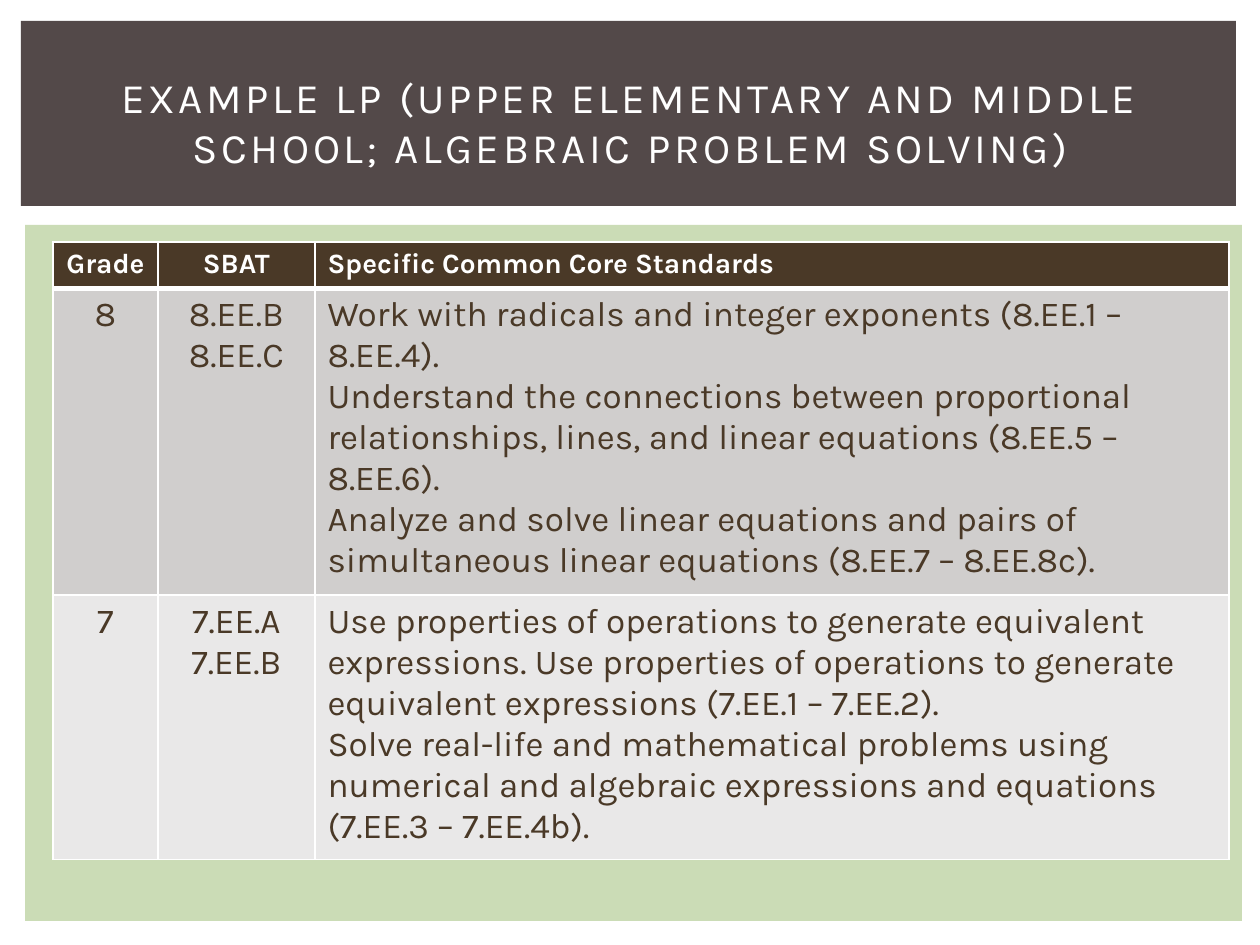
import pptx
import pptx.dml.color
import pptx.enum.shapes
import pptx.enum.text
import pptx.oxml
import pptx.oxml.ns
import pptx.util

PX = 914400 // 126
FONT = "Karla"
WHITE, BROWN = "FFFFFF", "4A3927"
CENTER = pptx.enum.text.PP_ALIGN.CENTER
LEFT = pptx.enum.text.PP_ALIGN.LEFT
MIDDLE = pptx.enum.text.MSO_ANCHOR.MIDDLE

TITLE = "EXAMPLE LP (UPPER ELEMENTARY AND MIDDLE SCHOOL; ALGEBRAIC PROBLEM SOLVING)"
TITLE_BOX = (53, 49, 1155, 145)
PANELS = [
    ((25, 225, 1217, 696), "CBDCB6"),
    ((21, 21, 1215, 185), "534949"),
]

STANDARDS = [
    (["Grade"], ["SBAT"], ["Specific Common Core Standards"]),
    (["8"], ["8.EE.B", "8.EE.C"], [
        "Work with radicals and integer exponents (8.EE.1 – 8.EE.4).",
        "Understand the connections between proportional relationships, lines, "
        "and linear equations (8.EE.5 – 8.EE.6).",
        "Analyze and solve linear equations and pairs of simultaneous linear "
        "equations (8.EE.7 – 8.EE.8c).",
    ]),
    (["7"], ["7.EE.A", "7.EE.B"], [
        "Use properties of operations to generate equivalent expressions. Use "
        "properties of operations to generate equivalent expressions (7.EE.1 – 7.EE.2).",
        "Solve real-life and mathematical problems using numerical and algebraic "
        "expressions and equations (7.EE.3 – 7.EE.4b).",
    ]),
]
TABLE_LEFT, TABLE_TOP = 53, 242
COLUMN_WIDTHS = [105, 157, 914]
COLUMN_ALIGNS = [CENTER, CENTER, LEFT]
ROW_HEIGHTS = [45, 299, 259]
ROW_FILLS = [BROWN, "D0CECD", "E9E8E8"]
HEADER_FORMAT = {"size": 16, "color": WHITE, "bold": True}
BODY_FORMAT = {"size": 20, "color": BROWN, "bold": False}


def emu(*lengths):
    return [length * PX for length in lengths]


def rgb(value):
    return pptx.dml.color.RGBColor.from_string(value)


def paint(part, color):
    part.fill.solid()
    part.fill.fore_color.rgb = rgb(color)


def write(frame, lines, align, size, color, bold=False):
    frame.word_wrap = True
    for index, line in enumerate(lines):
        paragraph = frame.paragraphs[0] if index == 0 else frame.add_paragraph()
        paragraph.alignment = align
        font = paragraph.add_run().font
        paragraph.runs[0].text = line
        values = {"name": FONT, "size": pptx.util.Pt(size), "bold": bold}
        for name, value in values.items():
            setattr(font, name, value)
        font.color.rgb = rgb(color)


def set_borders(cell, widths):
    """Draw white cell borders; widths maps a side (L, R, T, B) to points."""
    properties = cell._tc.get_or_add_tcPr()
    for position, (side, width) in enumerate(widths.items()):
        line = pptx.oxml.parse_xml(
            f'<a:ln{side} {pptx.oxml.ns.nsdecls("a")} w="{pptx.util.Pt(width)}">'
            f'<a:solidFill><a:srgbClr val="{WHITE}"/></a:solidFill></a:ln{side}>'
        )
        properties.insert(position, line)


def add_panels(slide):
    for box, color in PANELS:
        panel = slide.shapes.add_shape(
            pptx.enum.shapes.MSO_SHAPE.RECTANGLE, *emu(*box))
        panel.shadow.inherit = False
        paint(panel, color)
        panel.line.fill.background()


def add_title(slide):
    frame = slide.shapes.add_textbox(*emu(*TITLE_BOX)).text_frame
    frame.vertical_anchor = MIDDLE
    write(frame, [TITLE], CENTER, 24, WHITE)
    frame.paragraphs[0].runs[0].font._element.set("spc", "200")


def add_standards(slide):
    table = slide.shapes.add_table(
        len(STANDARDS), len(COLUMN_WIDTHS),
        *emu(TABLE_LEFT, TABLE_TOP, sum(COLUMN_WIDTHS), sum(ROW_HEIGHTS))).table
    for column, width in zip(table.columns, COLUMN_WIDTHS):
        column.width = width * PX
    for row, height in zip(table.rows, ROW_HEIGHTS):
        row.height = height * PX
    for r, entries in enumerate(STANDARDS):
        text_format = BODY_FORMAT if r else HEADER_FORMAT
        borders = {"L": 1, "R": 1, "T": 3 if r == 1 else 1, "B": 1 if r else 3}
        for c, lines in enumerate(entries):
            cell = table.cell(r, c)
            paint(cell, ROW_FILLS[r])
            set_borders(cell, borders)
            write(cell.text_frame, lines, COLUMN_ALIGNS[c], **text_format)


def main():
    deck = pptx.Presentation()
    deck.slide_width, deck.slide_height = emu(1260, 945)
    slide = deck.slides.add_slide(deck.slide_layouts[6])
    add_panels(slide)
    add_title(slide)
    add_standards(slide)
    deck.save("out.pptx")


if __name__ == "__main__":
    main()
